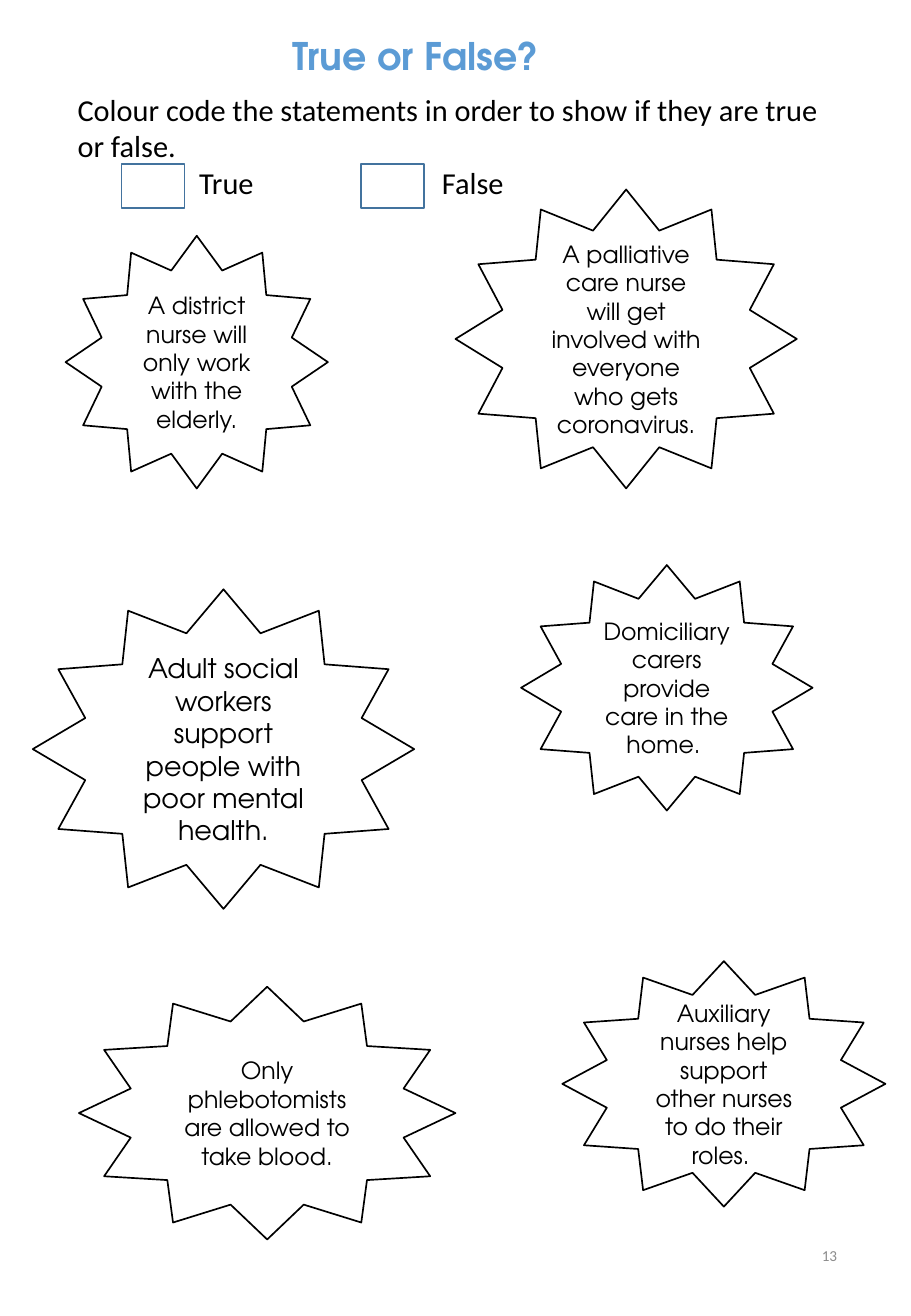
from lxml.etree import SubElement
from pptx import Presentation
from pptx.dml.color import RGBColor
from pptx.enum.shapes import MSO_SHAPE
from pptx.enum.text import MSO_ANCHOR, PP_ALIGN
from pptx.oxml.ns import qn
from pptx.util import Inches, Pt

COLOURS = {"white": "FFFFFF", "ink": "000000", "title": "5B9BD5", "box": "43739E", "number": "8C8C8C"}
DISPLAY, BODY = "TeX Gyre Adventor", "Calibri"

STATEMENTS = [
    ("A district nurse will only work with the elderly.", (0.54, 1.94, 2.16, 2.08), 14),
    ("Auxiliary nurses help support other nurses to do their roles. ", (4.63, 7.91, 2.66, 2.02), 14),
    ("A palliative care nurse will get involved with everyone who gets coronavirus.", (3.75, 1.56, 2.81, 2.46), 14),
    ("Only phlebotomists are allowed to take blood.", (0.65, 8.12, 3.1, 2.08), 14),
    ("Domiciliary carers provide care in the home. ", (4.29, 4.65, 2.4, 2.02), 14),
    ("Adult social workers support people with poor mental health.", (0.27, 4.85, 3.14, 2.63), 16),
]
INSTRUCTION = "Colour code the statements in order to show if they are true or false."
KEY_LABELS = "\tTrue\tFalse"
KEY_TABS = [1, 3]
KEY_BOXES = [(1, 1.35, 0.52, 0.36), (2.97, 1.35, 0.52, 0.36)]

TITLE_FORMAT = {"name": DISPLAY, "size": Pt(22.5), "bold": True}
BODY_FORMAT = {"name": BODY, "size": Pt(18)}
NUMBER_FORMAT = {"name": BODY, "size": Pt(9)}


def colour(name):
    return RGBColor.from_string(COLOURS[name])


def write(frame, lines, font_format, ink, align, anchor=MSO_ANCHOR.TOP, wrap=True):
    frame.word_wrap = wrap
    frame.vertical_anchor = anchor
    for index, line in enumerate(lines):
        paragraph = frame.add_paragraph() if index else frame.paragraphs[0]
        paragraph.alignment = align
        run = paragraph.add_run()
        run.text = line
        for attribute, value in font_format.items():
            setattr(run.font, attribute, value)
        run.font.color.rgb = colour(ink)


def add_outline(slide, kind, place, line_colour):
    shape = slide.shapes.add_shape(kind, *map(Inches, place))
    shape.shadow.inherit = False
    shape.fill.solid()
    shape.fill.fore_color.rgb = colour("white")
    shape.line.color.rgb = colour(line_colour)
    shape.line.width = Pt(1)
    return shape


def add_text(slide, place, *text):
    frame = slide.shapes.add_textbox(*map(Inches, place)).text_frame
    write(frame, *text)
    return frame


def set_tabs(paragraph, stops):
    tab_list = SubElement(paragraph._p.get_or_add_pPr(), qn("a:tabLst"))
    for stop in stops:
        SubElement(tab_list, qn("a:tab"), pos=str(Inches(stop)), algn="l")


def main():
    presentation = Presentation()
    presentation.slide_width, presentation.slide_height = Inches(7.5), Inches(10.83)
    slide = presentation.slides.add_slide(presentation.slide_layouts[6])

    for statement, place, size in STATEMENTS:
        star = add_outline(slide, MSO_SHAPE.STAR_12_POINT, place, "ink")
        star_format = {"name": DISPLAY, "size": Pt(size)}
        write(star.text_frame, [statement], star_format, "ink", PP_ALIGN.CENTER, MSO_ANCHOR.MIDDLE)

    add_text(slide, (2.29, 0.22, 2.35, 0.48), ["True or False? "], TITLE_FORMAT, "title",
             PP_ALIGN.CENTER, MSO_ANCHOR.TOP, False)
    instruction = add_text(slide, (0.54, 0.7, 6.41, 1.01), [INSTRUCTION, KEY_LABELS], BODY_FORMAT, "ink",
                           PP_ALIGN.LEFT)
    set_tabs(instruction.paragraphs[1], KEY_TABS)
    for place in KEY_BOXES:
        add_outline(slide, MSO_SHAPE.RECTANGLE, place, "box")
    add_text(slide, (5.3, 10.04, 1.69, 0.58), ["13"], NUMBER_FORMAT, "number",
             PP_ALIGN.RIGHT, MSO_ANCHOR.MIDDLE)

    presentation.save("out.pptx")


if __name__ == "__main__":
    main()
